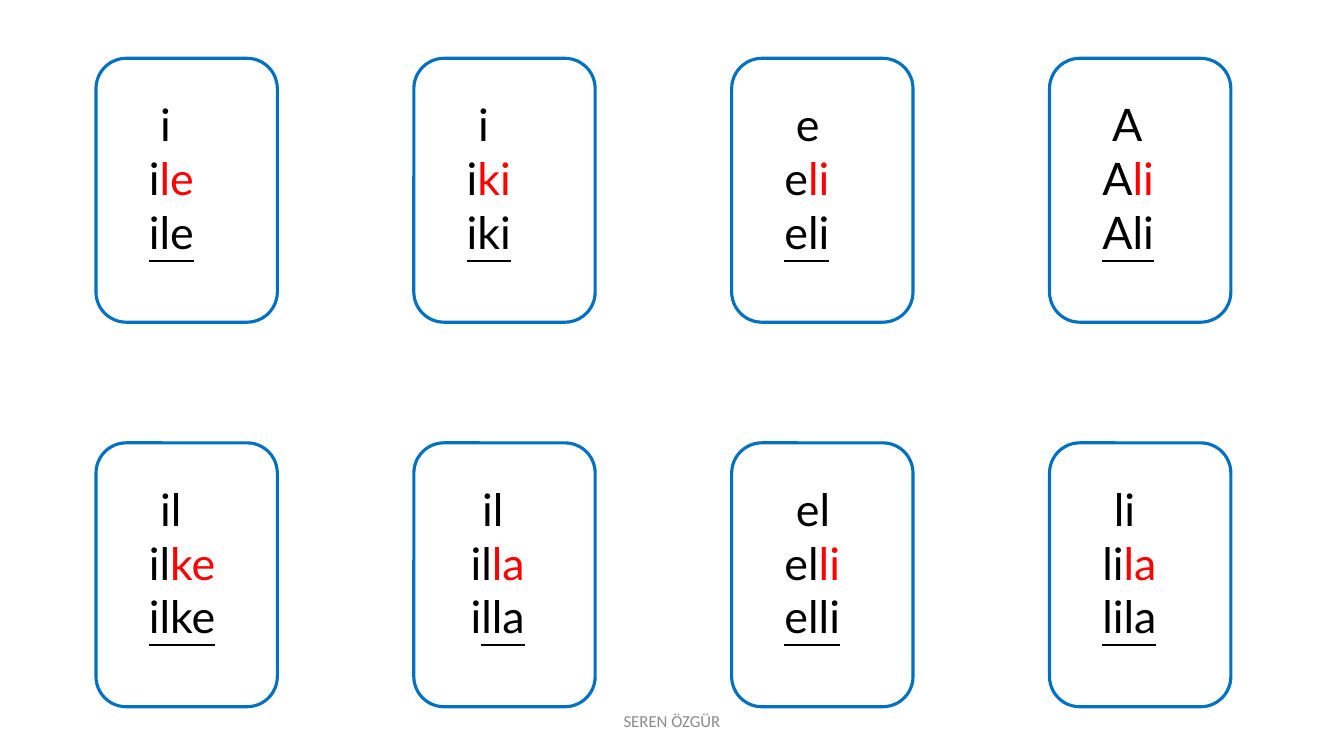
import pptx
import pptx.dml.color
import pptx.enum.shapes
import pptx.enum.text
import pptx.util

Cm = pptx.util.Cm
Pt = pptx.util.Pt

# Content: first part, added part, plain start of the last word, nudge in cm
CARDS = [
    [("i", "le", "", 0), ("i", "ki", "", 0), ("e", "li", "", 0), ("A", "li", "", 0)],
    [("il", "ke", "", 0), ("il", "la", "i", 0.1), ("el", "li", "", 0), ("li", "la", "", 0)],
]
FOOTER = "SEREN ÖZGÜR"
BLACK, RED, BLUE, GREY = "000000", "FF0000", "0070C0", "8C8C8C"

# Layout in cm
LEFT, TOP = 2.42, 1.47
STEP_X, STEP_Y = 8.01, 9.69
CARD_W, CARD_H = 4.57, 6.65
TEXT_X, TEXT_Y, TEXT_W, TEXT_H = 1.08, 0.85, 2.97, 4.37


def paint(target, color):
    target.rgb = pptx.dml.color.RGBColor.from_string(color)


def add_run(para, text, size, face, color, under=None):
    run = para.add_run()
    run.text = text
    run.font.size = Pt(size)
    run.font.name = face
    run.font.underline = under
    paint(run.font.color, color)


def add_text(slide, x, y, w, h):
    box = slide.shapes.add_textbox(Cm(x), Cm(y), Cm(w), Cm(h))
    box.text_frame.word_wrap = True
    return box.text_frame


def add_card(slide, x, y, start, added, plain, nudge):
    # Frame
    frame = slide.shapes.add_shape(
        pptx.enum.shapes.MSO_SHAPE.ROUNDED_RECTANGLE,
        Cm(x), Cm(y), Cm(CARD_W), Cm(CARD_H))
    frame.shadow.inherit = False
    frame.fill.background()
    paint(frame.line.color, BLUE)
    frame.line.width = Pt(2.25)

    # Three lines: start, start with the added part, whole word
    text = add_text(slide, x + TEXT_X + nudge, y + TEXT_Y, TEXT_W, TEXT_H)
    text.auto_size = pptx.enum.text.MSO_AUTO_SIZE.SHAPE_TO_FIT_TEXT
    para = text.paragraphs[0]
    add_run(para, " " + start, 32, "Lato", BLACK)
    para.add_line_break()
    add_run(para, start, 32, "Lato", BLACK)
    add_run(para, added, 32, "Lato", RED)
    para.add_line_break()
    if plain:
        add_run(para, plain, 32, "Lato", BLACK)
    add_run(para, (start + added)[len(plain):], 32, "Lato", BLACK, True)


def main():
    deck = pptx.Presentation()
    deck.slide_width, deck.slide_height = Cm(33.87), Cm(19.05)
    slide = deck.slides.add_slide(deck.slide_layouts[6])

    # Card grid
    for row, cards in enumerate(CARDS):
        for col, card in enumerate(cards):
            add_card(slide, LEFT + col * STEP_X, TOP + row * STEP_Y, *card)

    # Footer
    text = add_text(slide, 11.22, 17.66, 11.43, 1.01)
    text.vertical_anchor = pptx.enum.text.MSO_ANCHOR.MIDDLE
    para = text.paragraphs[0]
    para.alignment = pptx.enum.text.PP_ALIGN.CENTER
    add_run(para, FOOTER, 12, "Calibri", GREY)

    deck.save("out.pptx")


if __name__ == "__main__":
    main()
